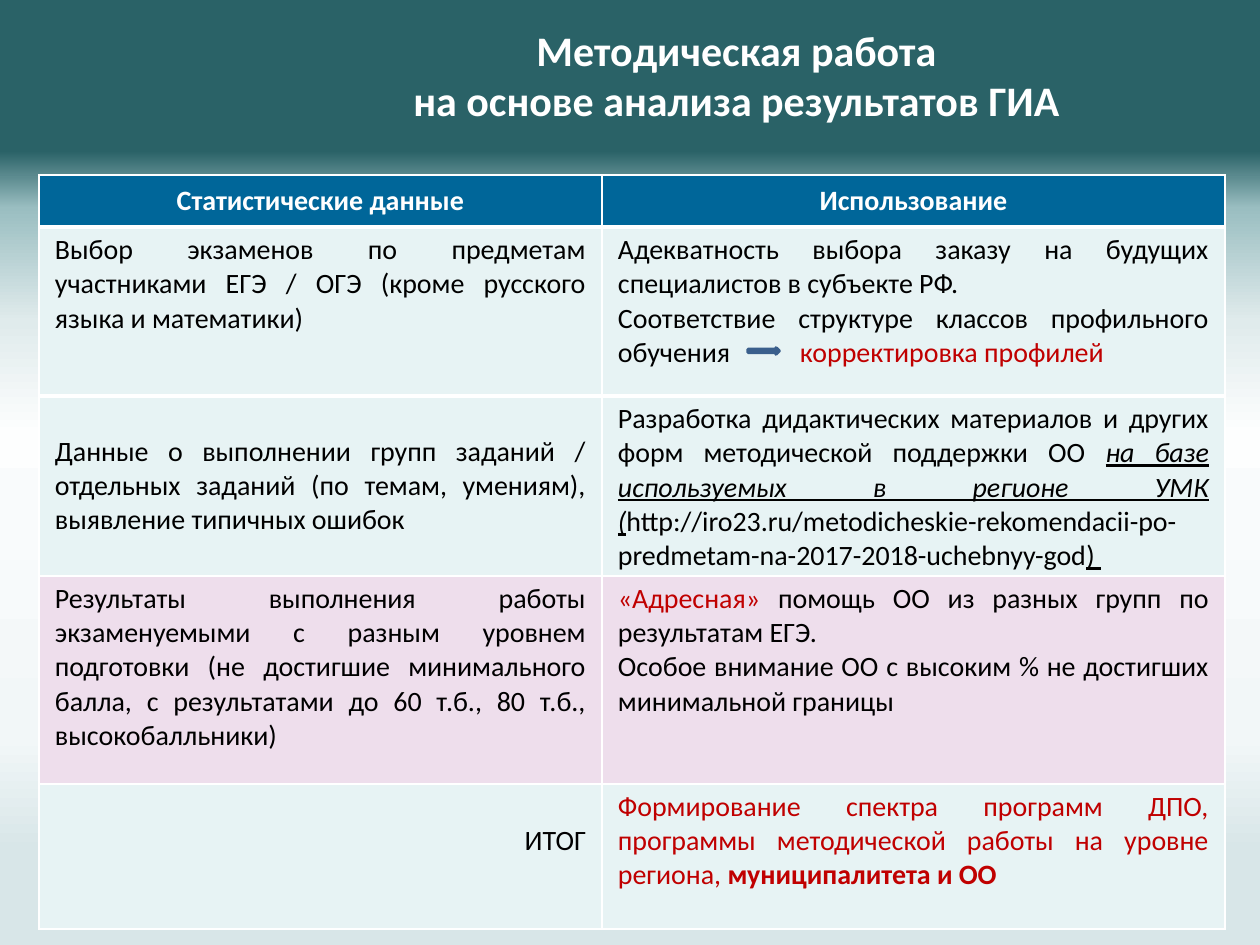
from lxml.etree import SubElement
from pptx import Presentation
from pptx.dml.color import RGBColor
from pptx.enum.shapes import MSO_SHAPE
from pptx.enum.text import MSO_ANCHOR, PP_ALIGN
from pptx.oxml.ns import qn
from pptx.util import Emu, Pt

SCALE = 914400 / 126
FONT = "Calibri"
HEX = {
    "white": "FFFFFF", "black": "000000", "red": "C00000",
    "head": "006699", "pale": "E7F3F4", "pink": "EEDEEC",
    "arrow": "C0504D", "edge": "3A5F8C",
}
STOPS = [(16, "2A6267"), (22, "9ABEC1"), (34, "E0EBEC"), (46, "FDFEFE"),
         (53, "F9FBFC"), (78, "F2F7F8"), (90, "D8E6E8")]
ALIGN = {"c": PP_ALIGN.CENTER, "j": PP_ALIGN.JUSTIFY, "r": PP_ALIGN.RIGHT}
TOP, MID = MSO_ANCHOR.TOP, MSO_ANCHOR.MIDDLE


def px(num):
    return Emu(round(num * SCALE))


def rgb(name):
    return RGBColor.from_string(HEX[name])


def run(text, **form):
    """Pair a text with its format: color, bold, italic, underline."""
    return text, form


def head(text):
    return dict(paras=[[run(text, color="white", bold=True)]],
                fill="head", align="c", anchor=MID)


def body(*paras, **look):
    return dict(paras=paras, **look)


ROWS = [
    [head("Статистические данные"), head("Использование")],
    [body([run("Выбор экзаменов по предметам участниками ЕГЭ / ОГЭ "
               "(кроме русского языка и математики)")]),
     body([run("Адекватность выбора заказу на будущих специалистов "
               "в субъекте РФ.")],
          [run("Соответствие структуре классов профильного обучения\t"),
           run("корректировка профилей", color="red")], tab=182)],
    [body([run("Данные о выполнении групп заданий / отдельных заданий "
               "(по темам, умениям), выявление типичных ошибок")], anchor=MID),
     body([run("Разработка дидактических материалов и других форм "
               "методической поддержки ОО "),
           run("на базе используемых в регионе УМК (",
               italic=True, underline=True),
           run("http://iro23.ru/metodicheskie-rekomendacii-po-predmetam-"
               "na-2017-2018-uchebnyy-god"),
           run(") ", underline=True)], anchor=MID)],
    [body([run("Результаты выполнения работы экзаменуемыми с разным уровнем "
               "подготовки (не достигшие минимального балла, с результатами "
               "до 60 т.б., 80 т.б., высокобалльники)")], fill="pink"),
     body([run("«Адресная» ", color="red"),
           run("помощь ОО из разных групп по результатам ЕГЭ.")],
          [run("Особое внимание ОО с высоким % не достигших "
               "минимальной границы")], fill="pink")],
    [body([run("ИТОГ")], align="r", inset=40),
     body([run("Формирование спектра программ ДПО, программы методической "
               "работы на уровне региона, ", color="red"),
           run("муниципалитета и ОО", color="red", bold=True)])],
]


class Deck:
    def __init__(self, wide, high):
        self.prs = Presentation()
        self.prs.slide_width, self.prs.slide_height = px(wide), px(high)
        self.slide = self.prs.slides.add_slide(self.prs.slide_layouts[6])

    def ground(self, stops):
        """Fill the background with a gradient from top to bottom."""
        fill = self.slide.background.fill
        fill.gradient()
        fill.gradient_angle = 270
        grad = self.slide.element.find(".//" + qn("a:gsLst"))
        for old in list(grad):
            grad.remove(old)
        for pos, color in stops:
            stop = SubElement(grad, qn("a:gs"), pos=str(pos * 1000))
            SubElement(stop, qn("a:srgbClr"), val=color)

    def text(self, frame, paras, size=16, align="j", tab=None):
        for num, runs in enumerate(paras):
            para = frame.add_paragraph() if num else frame.paragraphs[0]
            para.alignment = ALIGN[align]
            if tab:
                tabs = SubElement(para._p.get_or_add_pPr(), qn("a:tabLst"))
                SubElement(tabs, qn("a:tab"), pos=str(px(tab)), algn="l")
            for words, form in runs:
                part = para.add_run()
                part.text = words
                font = part.font
                font.name, font.size = FONT, Pt(size)
                font.color.rgb = rgb(form.get("color", "black"))
                font.bold = form.get("bold", False)
                font.italic = form.get("italic", False)
                font.underline = form.get("underline", False)

    def title(self, box, lines):
        frame = self.slide.shapes.add_textbox(*map(px, box)).text_frame
        frame.word_wrap = True
        frame.vertical_anchor = MID
        paras = [[run(line, color="white", bold=True)] for line in lines]
        self.text(frame, paras, size=24, align="c")

    def edges(self, cell, widths):
        """Draw white borders; widths are points for each side."""
        props = cell._tc.get_or_add_tcPr()
        for side, width in widths.items():
            line = SubElement(props, qn("a:ln" + side), w=str(Pt(width)))
            fill = SubElement(line, qn("a:solidFill"))
            SubElement(fill, qn("a:srgbClr"), val=HEX["white"])

    def cell(self, cell, widths, paras, fill="pale", align="j",
             anchor=TOP, inset=6, tab=None):
        self.edges(cell, widths)
        cell.fill.solid()
        cell.fill.fore_color.rgb = rgb(fill)
        cell.margin_left = cell.margin_right = px(16)
        cell.margin_top, cell.margin_bottom = px(inset), px(6)
        cell.vertical_anchor = anchor
        self.text(cell.text_frame, paras, align=align, tab=tab)

    def table(self, left, top, cols, highs, rows):
        grid = self.slide.shapes.add_table(
            len(rows), len(cols), px(left), px(top),
            px(sum(cols)), px(sum(highs))).table
        grid.horz_banding = False
        for col, wide in zip(grid.columns, cols):
            col.width = px(wide)
        for num, (high, row) in enumerate(zip(highs, rows)):
            grid.rows[num].height = px(high)
            widths = {"L": 1, "R": 1, "T": 3 if num in (1, 2) else 1,
                      "B": 3 if num < 2 else 1}
            for col, look in enumerate(row):
                self.cell(grid.cell(num, col), widths, **look)

    def arrow(self, box):
        shape = self.slide.shapes.add_shape(
            MSO_SHAPE.RIGHT_ARROW, *map(px, box))
        shape.shadow.inherit = False
        shape.fill.solid()
        shape.fill.fore_color.rgb = rgb("arrow")
        shape.line.color.rgb = rgb("edge")
        shape.line.width = Pt(2)


def main():
    deck = Deck(1260, 945)
    deck.ground(STOPS)
    deck.title((213, 25, 1047, 100),
               ["Методическая работа", "на основе анализа результатов ГИА"])
    deck.table(39, 175, [563, 623], [52, 169, 169, 208, 145], ROWS)
    deck.arrow((748, 348, 31, 6))
    deck.prs.save("out.pptx")


if __name__ == "__main__":
    main()
